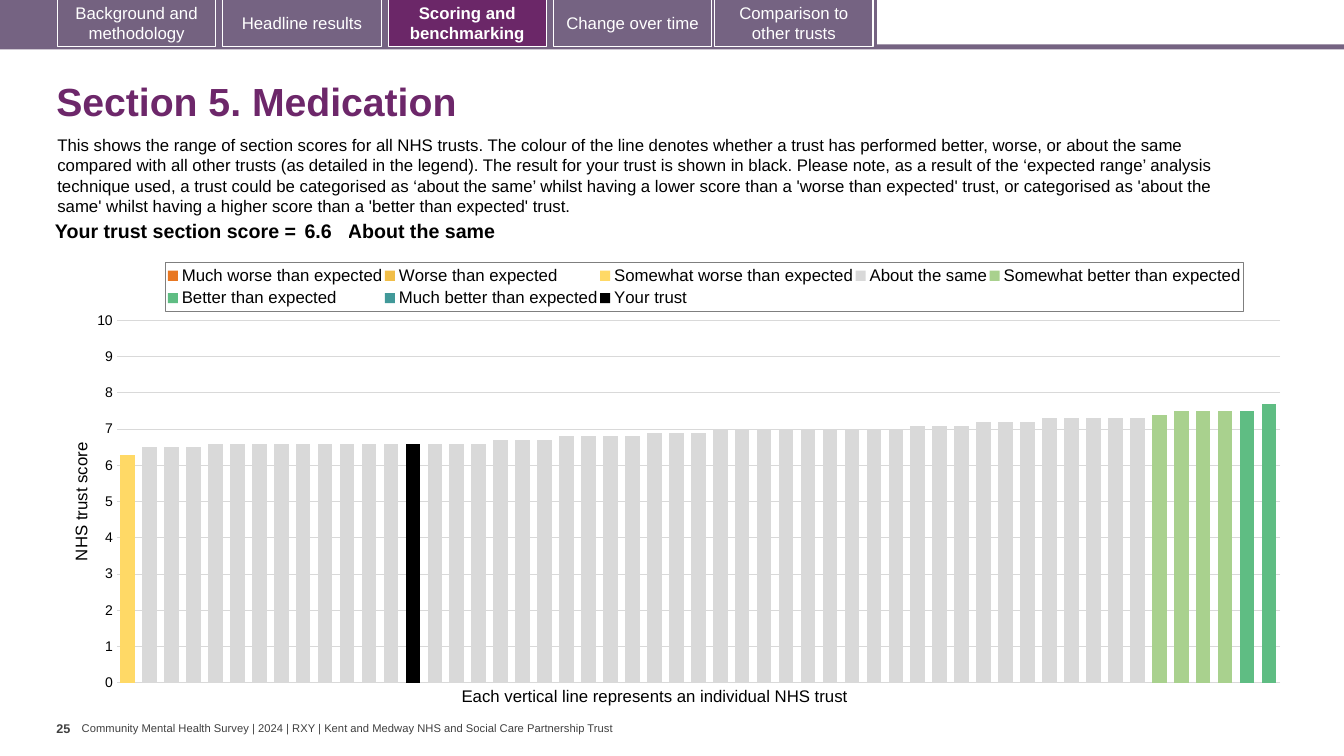
from copy import deepcopy

from lxml import etree
from pptx import Presentation
from pptx import util as u
from pptx.chart import data
from pptx.dml.color import RGBColor
from pptx.enum import chart as kinds
from pptx.enum import shapes, text
from pptx.oxml.ns import qn

HUES = {
    "black": "000000", "white": "FFFFFF", "grey": "404040", "grid": "D9D9D9",
    "edge": "7F7F7F", "bar": "756382", "first": "746280", "live": "6B2768",
    "title": "6D276A",
}
TABS = [
    ("Background and methodology", 4.28, "first"),
    ("Headline results", 16.58, "bar"),
    ("Scoring and benchmarking", 28.88, "live"),
    ("Change over time", 41.18, "bar"),
    ("Comparison to other trusts", 53.18, "bar"),
]
BODY = (
    "This shows the range of section scores for all NHS trusts. The colour of the line "
    "denotes whether a trust has performed better, worse, or about the same compared with "
    "all other trusts (as detailed in the legend). The result for your trust is shown in "
    "black. Please note, as a result of the ‘expected range’ analysis technique used, a "
    "trust could be categorised as ‘about the same’ whilst having a lower score than a "
    "'worse than expected' trust, or categorised as 'about the same' whilst having a higher "
    "score than a 'better than expected' trust."
)
SAME = [score for score, count in [(6.5, 3), (6.6, 13), (6.7, 3), (6.8, 4), (6.9, 3),
                                   (7, 9), (7.1, 3), (7.2, 3), (7.3, 5)]
        for _ in range(count)]
COUNT = 53
BANDS = [
    ("Much worse than expected", "E87722", 0, []),
    ("Worse than expected", "F1BE48", 0, []),
    ("Somewhat worse than expected", "FFD966", 0, [6.3]),
    ("About the same", "D9D9D9", 1, SAME),
    ("Somewhat better than expected", "A9D18E", 47, [7.4, 7.5, 7.5, 7.5]),
    ("Better than expected", "5FBD83", 51, [7.5, 7.7]),
    ("Much better than expected", "419999", 0, []),
    ("Your trust", "000000", 13, [6.6]),
]


def apply(item, **values):
    """Set each named value on the item."""
    for name, value in values.items():
        setattr(item, name, value)


def place(parent, index, *shares):
    """Give a chart part a fixed layout in shares of the chart."""
    for old in parent.findall(qn("c:layout")):
        parent.remove(old)
    layout = etree.Element(qn("c:layout"))
    manual = etree.SubElement(layout, qn("c:manualLayout"))
    rules = [("layoutTarget", "inner")] if parent.tag == qn("c:plotArea") else []
    rules += [("xMode", "edge"), ("yMode", "edge"), *zip("xywh", shares)]
    for tag, value in rules:
        etree.SubElement(manual, qn("c:" + tag)).set("val", str(value))
    parent.insert(index, layout)


def split(area):
    """Move the last series onto a second pair of axes."""
    front = area.find(qn("c:barChart"))
    back = deepcopy(front)
    front.remove(front.findall(qn("c:ser"))[-1])
    for series in back.findall(qn("c:ser"))[:-1]:
        back.remove(series)
    front.addnext(back)
    cat, val = (deepcopy(area.find(qn(tag))) for tag in ("c:catAx", "c:valAx"))
    for tag in ("c:majorGridlines", "c:title"):
        val.remove(val.find(qn(tag)))
    for tag, value in [("axPos", "r"), ("tickLblPos", "none"), ("crosses", "max")]:
        val.find(qn("c:" + tag)).set("val", value)
    ids = ["5001", "5002"]
    for node, mark in zip(back.findall(qn("c:axId")), ids):
        node.set("val", mark)
    for axis, own, cross in [(cat, *ids), (val, *ids[::-1])]:
        axis.find(qn("c:axId")).set("val", own)
        axis.find(qn("c:crossAx")).set("val", cross)
    area.find(qn("c:valAx")).addnext(val)
    val.addnext(cat)


class Deck:
    """Hold the style and the current slide; lengths are percent of its size."""

    def __init__(self):
        """Start one blank slide."""
        self.show = Presentation()
        apply(self.show, slide_width=u.Inches(13.333), slide_height=u.Inches(7.5))
        self.slide = self.show.slides.add_slide(self.show.slide_layouts[6])
        self.face = "Arial"

    def box(self, left, top, width, height):
        """Turn percent shares into lengths."""
        wide, high = self.show.slide_width / 100, self.show.slide_height / 100
        return [int(n) for n in (left * wide, top * high, width * wide, height * high)]

    def style(self, font, size, hue="black", bold=False):
        """Set a font."""
        apply(font, name=self.face, size=u.Pt(size), bold=bold)
        font.color.rgb = RGBColor.from_string(HUES[hue])

    def say(self, frame, words, size, hue="black", bold=False, align=None, **form):
        """Fill a text frame with one paragraph."""
        apply(frame, word_wrap=True, **form)
        line = frame.paragraphs[0]
        line.alignment = align
        run = line.add_run()
        run.text = words
        self.style(run.font, size, hue, bold)
        return line

    def label(self, spot, words, size, hue="black", bold=False, **form):
        """Add a text box."""
        frame = self.slide.shapes.add_textbox(*self.box(*spot)).text_frame
        return self.say(frame, words, size, hue, bold, **form)

    def block(self, spot, hue, edge=None):
        """Add a filled rectangle."""
        shape = self.slide.shapes.add_shape(shapes.MSO_SHAPE.RECTANGLE, *self.box(*spot))
        shape.shadow.inherit = False
        shape.fill.solid()
        shape.fill.fore_color.rgb = RGBColor.from_string(HUES[hue])
        if edge:
            shape.line.color.rgb = RGBColor.from_string(HUES[edge])
            shape.line.width = u.Pt(0.75)
        else:
            shape.line.fill.background()
        return shape

    def table(self, spot, cells):
        """Add a plain one-row table from text, width, inset and alignment."""
        grid = self.slide.shapes.add_table(1, len(cells), *self.box(*spot)).table
        apply(grid, first_row=False, horz_banding=False)
        for index, (words, width, inset, align) in enumerate(cells):
            grid.columns[index].width = self.box(width, 0, 0, 0)[0]
            cell = grid.cell(0, index)
            cell.fill.background()
            side, edge = u.Inches(inset), u.Inches(0.04)
            apply(cell, margin_left=side, margin_right=side,
                  margin_top=edge, margin_bottom=edge)
            self.say(cell.text_frame, words, 14, bold=True, align=align)

    def chart(self, spot, bands, title):
        """Add the column chart of all trusts."""
        table = data.CategoryChartData()
        table.categories = [str(n + 1) for n in range(COUNT)]
        for name, _, start, scores in bands:
            rest = COUNT - start - len(scores)
            table.add_series(name, [None] * start + scores + [None] * rest)
        chart = self.slide.shapes.add_chart(
            kinds.XL_CHART_TYPE.COLUMN_CLUSTERED, *self.box(*spot), table).chart
        apply(chart, has_title=False, has_legend=True)
        self.style(chart.font, 10)
        plot = chart.plots[0]
        apply(plot, gap_width=50, overlap=100, vary_by_categories=False)
        for series, band in zip(plot.series, bands):
            series.format.fill.solid()
            series.format.fill.fore_color.rgb = RGBColor.from_string(band[1])
        chart.category_axis.visible = False
        axis = chart.value_axis
        apply(axis, minimum_scale=0, maximum_scale=10, major_unit=1,
              major_tick_mark=kinds.XL_TICK_MARK.NONE)
        axis.format.line.fill.background()
        rule = axis.major_gridlines.format.line
        rule.color.rgb, rule.width = RGBColor.from_string(HUES["grid"]), u.Pt(0.75)
        self.style(axis.tick_labels.font, 10)
        self.say(axis.axis_title.text_frame, title, 12)
        key = chart.legend
        apply(key, position=kinds.XL_LEGEND_POSITION.TOP, include_in_layout=False)
        self.style(key.font, 12)
        area, legend = (next(chart.element.iter(qn(tag)))
                        for tag in ("c:plotArea", "c:legend"))
        turn = next(next(area.iter(qn("c:title"))).iter(qn("a:bodyPr")))
        turn.set("rot", "-5400000")
        turn.set("vert", "horz")
        place(legend, 1, 0.08, 0.03, 0.88, 0.11)
        frame = etree.Element(qn("c:spPr"))
        line = etree.SubElement(frame, qn("a:ln"), w="6350")
        fill = etree.SubElement(line, qn("a:solidFill"))
        etree.SubElement(fill, qn("a:srgbClr"), val=HUES["edge"])
        legend.find(qn("c:overlay")).addnext(frame)
        place(area, 0, 0.04, 0.16, 0.95, 0.81)
        split(area)


def main():
    """Build and save the slide."""
    deck = Deck()
    middle, centre = text.MSO_ANCHOR.MIDDLE, text.PP_ALIGN.CENTER
    flush = dict(margin_left=0, margin_right=0)
    deck.block((0, 5.87, 100, 0.67), "bar")
    deck.block((0, 0, 65.25, 6.27), "bar")
    for words, left, hue in TABS:
        tab = deck.block((left, -0.13, 11.78, 6.27), hue, "white")
        deck.say(tab.text_frame, words, 12, "white", hue == "live", centre,
                 vertical_anchor=middle)
    title = deck.label((3.45, 8.93, 93.68, 9.6), "Section 5. Medication", 28, "title", True,
                       vertical_anchor=middle)
    title.line_spacing = 0.9
    deck.label((3.53, 17.2, 90.98, 12.13), BODY, 12)
    deck.chart((5.03, 32.93, 91.13, 59.2), BANDS, "NHS trust score")
    deck.label((33.6, 90, 30.83, 4), "Each vertical line represents an individual NHS trust", 12)
    deck.table((2.63, 28.67, 87.69, 4.13), [
        ("Your trust section score =", 19.73, 0.04, text.PP_ALIGN.RIGHT),
        ("6.6", 3.53, 0.04, None),
        ("About the same", 64.43, 0, None),
    ])
    deck.label((4.2, 94.67, 1.88, 5.33), "25", 9, "grey", True, **flush)
    deck.label((6.08, 95.47, 40.05, 1.73),
               "Community Mental Health Survey | 2024 | RXY | "
               "Kent and Medway NHS and Social Care Partnership Trust",
               8, "grey", vertical_anchor=middle, margin_top=0, margin_bottom=0, **flush)
    deck.show.save("out.pptx")


if __name__ == "__main__":
    main()
